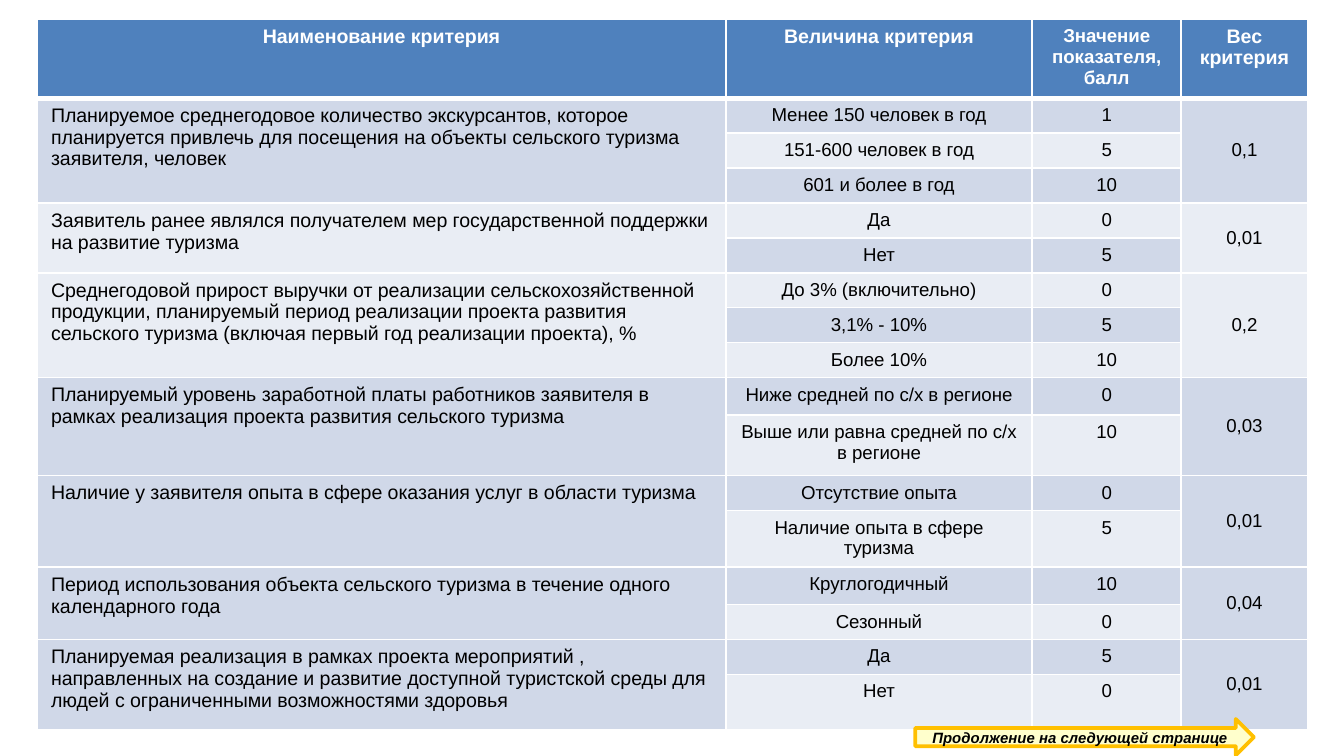
from lxml import etree
from pptx import Presentation
from pptx.dml.color import RGBColor as RGB
from pptx.enum.shapes import MSO_SHAPE as Shape
from pptx.enum.text import MSO_ANCHOR as Anchor, PP_ALIGN as Align
from pptx.oxml.ns import qn
from pptx.util import Inches, Pt

COLORS = {
    "head": "4F81BD", "odd": "D0D8E8", "even": "E9EDF4", "white": "FFFFFF",
    "text": "000000", "arrow": "FFFFCC", "edge": "FFC000",
}
WIDTHS = [5.12, 2.28, 1.11, 0.94]
ROW = 0.26
TALL = {0: 0.59, 9: 0.28, 10: 0.45, 12: 0.42, 13: 0.28, 16: 0.41}
HEADS = [
    ("Наименование критерия", 10.5),
    ("Величина критерия", 10.5),
    ("Значение показателя, балл", 10),
    ("Вес критерия", 10.5),
]
# Criterion, weight, then its options with their points
GROUPS = [
    ("Планируемое среднегодовое количество экскурсантов, которое планируется "
     "привлечь для посещения на объекты сельского туризма заявителя, человек", "0,1",
     [("Менее 150 человек в год", "1"), ("151-600 человек в год", "5"),
      ("601 и более в год", "10")]),
    ("Заявитель ранее являлся получателем мер государственной поддержки "
     "на развитие туризма", "0,01",
     [("Да", "0"), ("Нет", "5")]),
    ("Среднегодовой прирост выручки от реализации сельскохозяйственной продукции, "
     "планируемый период реализации проекта развития сельского туризма "
     "(включая первый год реализации проекта), %", "0,2",
     [("До 3% (включительно)", "0"), ("3,1% - 10%", "5"), ("Более 10%", "10")]),
    ("Планируемый уровень заработной платы работников заявителя в рамках "
     "реализация проекта развития сельского туризма", "0,03",
     [("Ниже средней по с/х в регионе", "0"),
      ("Выше или равна средней по с/х в регионе", "10")]),
    ("Наличие у заявителя опыта в сфере оказания услуг в области туризма", "0,01",
     [("Отсутствие опыта", "0"), ("Наличие опыта в сфере туризма", "5")]),
    ("Период использования объекта сельского туризма в течение одного "
     "календарного года", "0,04",
     [("Круглогодичный", "10"), ("Сезонный", "0")]),
    ("Планируемая реализация в рамках проекта мероприятий , направленных на "
     "создание и развитие доступной туристской среды для людей с ограниченными "
     "возможностями здоровья", "0,01",
     [("Да", "5"), ("Нет", "0")]),
]


def color(name):
    return RGB.from_string(COLORS[name])


def write(frame, text, size, ink="text", bold=False, align=Align.CENTER):
    para = frame.paragraphs[0]
    para.alignment = align
    run = para.add_run()
    run.text = text
    run.font.name = "Arial"
    run.font.size = Pt(size)
    run.font.bold = bold
    run.font.color.rgb = color(ink)
    return run


prs = Presentation()
prs.slide_width = Inches(10)
prs.slide_height = prs.slide_width * 9 // 16
slide = prs.slides.add_slide(prs.slide_layouts[6])

# Table grid, banded fills and white borders
count = 1 + sum(len(options) for _, _, options in GROUPS)
heights = [TALL.get(i, ROW) for i in range(count)]
table = slide.shapes.add_table(
    count, len(WIDTHS), Inches(0.28), Inches(0.14),
    Inches(sum(WIDTHS)), Inches(sum(heights))).table
for col, width in zip(table.columns, WIDTHS):
    col.width = Inches(width)
for i, (row, height) in enumerate(zip(table.rows, heights)):
    row.height = Inches(height)
    for cell in row.cells:
        props = cell._tc.get_or_add_tcPr()
        for side in "LRTB":
            thick = (i, side) in ((0, "B"), (1, "T"))
            line = etree.SubElement(props, qn(f"a:ln{side}"), w=str(Pt(3 if thick else 1)))
            fill = etree.SubElement(line, qn("a:solidFill"))
            etree.SubElement(fill, qn("a:srgbClr"), val=COLORS["white"])
        cell.fill.solid()
        cell.fill.fore_color.rgb = color("head" if i == 0 else "odd" if i % 2 else "even")

for j, (text, size) in enumerate(HEADS):
    write(table.cell(0, j).text_frame, text, size, "white", True)

# Each criterion and weight spans the rows of its options
top = 1
for name, weight, options in GROUPS:
    last = top + len(options) - 1
    for j in (0, 3):
        table.cell(top, j).merge(table.cell(last, j))
    write(table.cell(top, 0).text_frame, name, 10.5, align=Align.LEFT)
    write(table.cell(top, 3).text_frame, weight, 10)
    table.cell(top, 3).vertical_anchor = Anchor.MIDDLE
    for i, pair in enumerate(options, top):
        for j, text in enumerate(pair, 1):
            write(table.cell(i, j).text_frame, text, 10)
    top = last + 1

# Arrow to the next page
arrow = slide.shapes.add_shape(
    Shape.RIGHT_ARROW, Inches(6.81), Inches(5.35), Inches(2.52), Inches(0.27))
arrow.shadow.inherit = False
arrow.fill.solid()
arrow.fill.fore_color.rgb = color("arrow")
arrow.line.color.rgb = color("edge")
arrow.line.width = Pt(2)
frame = arrow.text_frame
frame.margin_left = frame.margin_right = frame.margin_top = frame.margin_bottom = 0
frame.word_wrap = True
frame.vertical_anchor = Anchor.MIDDLE
write(frame, "Продолжение на следующей странице", 8, bold=True).font.italic = True

prs.save("out.pptx")
